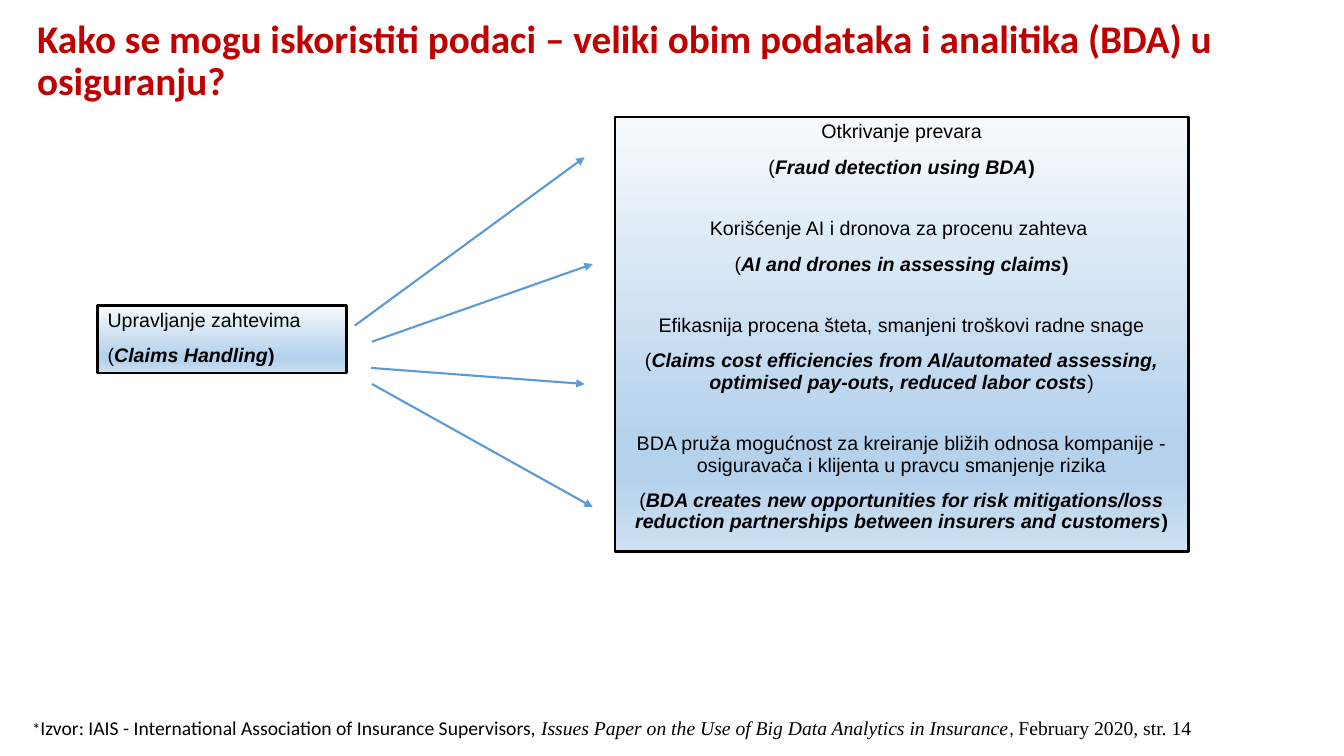
import pptx
import pptx.dml.color
import pptx.enum.dml
import pptx.enum.shapes
import pptx.enum.text
import pptx.oxml
import pptx.oxml.ns
import pptx.util
from dataclasses import dataclass

Pt = pptx.util.Pt
RGB = pptx.dml.color.RGBColor.from_string
ALIGN = pptx.enum.text.PP_ALIGN
ANCHOR = pptx.enum.text.MSO_ANCHOR


@dataclass(frozen=True)
class Theme:
    title: str = "C00000"
    text: str = "000000"
    arrow: str = "5B9BD5"
    gradient: tuple = ((0, "F7FAFD"), (74, "B5D2EC"), (83, "B5D2EC"), (100, "CEE1F2"))
    title_size: int = 28
    body_size: int = 14
    mark_size: int = 12
    heading_font: str = "Calibri"
    body_font: str = "Arial"
    source_font: str = "Times New Roman"
    box_line: float = 1.75
    arrow_line: float = 1.5


def set_all(target, values):
    for name, value in values.items():
        setattr(target, name, value)


class SlideBuilder:
    def __init__(self, slide, theme):
        self.slide = slide
        self.theme = theme

    def paragraph(self, tf, runs, color, **layout):
        """Fill the empty first paragraph or add one; runs are (text, font values)."""
        p = tf.paragraphs[0]
        if p.runs:
            p = tf.add_paragraph()
        set_all(p, layout)
        for text, values in runs:
            r = p.add_run()
            r.text = text
            set_all(r.font, values)
            r.font.color.rgb = RGB(color)

    def text(self, rect, runs, color, anchor=ANCHOR.TOP, **layout):
        sp = self.slide.shapes.add_textbox(*map(Pt, rect))
        set_all(sp.text_frame, {"word_wrap": True, "vertical_anchor": anchor})
        self.paragraph(sp.text_frame, runs, color, **layout)

    def box(self, rect, topics, alignment):
        """Gradient box of topics: (local name, English name, closing bracket is bold)."""
        t = self.theme
        sp = self.slide.shapes.add_shape(
            pptx.enum.shapes.MSO_SHAPE.RECTANGLE, *map(Pt, rect))
        sp.shadow.inherit = False
        self.gradient(sp.fill)
        sp.line.color.rgb = RGB(t.text)
        sp.line.width = Pt(t.box_line)
        tf = sp.text_frame
        set_all(tf, {"word_wrap": True, "vertical_anchor": ANCHOR.TOP})
        plain = {"name": t.body_font, "size": Pt(t.body_size), "bold": False, "italic": False}
        for i, (local, english, bold_end) in enumerate(topics):
            layout = {"alignment": alignment, "line_spacing": 0.9}
            self.paragraph(tf, [(local, plain)], t.text,
                           space_before=Pt(29 if i else 0), **layout)
            runs = [("(", plain),
                    (english, plain | {"bold": True, "italic": True}),
                    (")", plain | {"bold": bold_end})]
            self.paragraph(tf, runs, t.text, space_before=Pt(10), **layout)

    def gradient(self, fill):
        """Replace the two default stops by those of the theme, running downwards."""
        fill.gradient()
        fill.gradient_angle = 270
        stops = fill.gradient_stops._gsLst
        for gs in list(stops):
            stops.remove(gs)
        for percent, color in self.theme.gradient:
            stops.append(pptx.oxml.parse_xml(
                f'<a:gs {pptx.oxml.ns.nsdecls("a")} pos="{percent * 1000}">'
                f'<a:srgbClr val="{color}"/></a:gs>'))

    def arrow(self, start, end):
        c = self.slide.shapes.add_connector(
            pptx.enum.shapes.MSO_CONNECTOR.STRAIGHT, *map(Pt, start + end))
        c.line.color.rgb = RGB(self.theme.arrow)
        c.line.width = Pt(self.theme.arrow_line)
        ns = pptx.oxml.ns.nsdecls("a")
        c.line._get_or_add_ln().append(
            pptx.oxml.parse_xml(f'<a:tailEnd {ns} type="triangle"/>'))
        c._element.spPr.append(pptx.oxml.parse_xml(f"<a:effectLst {ns}/>"))


CLAIMS = [("Upravljanje zahtevima", "Claims Handling", True)]
USES = [
    ("Otkrivanje prevara", "Fraud detection using BDA", True),
    ("Korišćenje AI i dronova za procenu zahteva ",
     "AI and drones in assessing claims", True),
    ("Efikasnija procena šteta, smanjeni troškovi radne snage",
     "Claims cost efficiencies from AI/automated assessing, "
     "optimised pay-outs, reduced labor costs", False),
    ("BDA pruža mogućnost za kreiranje bližih odnosa kompanije - "
     "osiguravača i klijenta u pravcu smanjenje rizika",
     "BDA creates new opportunities for risk mitigations/loss reduction "
     "partnerships between insurers and customers", True),
]
ARROWS = [
    ((253.4, 232.6), (417.6, 112.3)),
    ((265.7, 244.1), (423.4, 188.6)),
    ((265, 262.8), (417.6, 274.3)),
    ((265.7, 274.3), (423.4, 362.2)),
]


def main():
    prs = pptx.Presentation()
    set_all(prs, {"slide_width": Pt(960), "slide_height": Pt(540)})
    theme = Theme()
    s = SlideBuilder(prs.slides.add_slide(prs.slide_layouts[6]), theme)

    title = {"name": theme.heading_font, "size": Pt(theme.title_size), "bold": True}
    s.text((19.4, 28.8, 932.4, 30.2),
           [("Kako se mogu iskoristiti podaci – veliki obim podataka "
             "i analitika (BDA) u osiguranju?", title)],
           theme.title, ANCHOR.MIDDLE, line_spacing=0.9)

    s.box((69.8, 218.2, 177.8, 48.2), CLAIMS, ALIGN.LEFT)
    s.box((439.2, 83.5, 409.7, 310.3), USES, ALIGN.CENTER)
    for start, end in ARROWS:
        s.arrow(start, end)

    heading = {"name": theme.heading_font, "size": Pt(theme.body_size)}
    source = heading | {"name": theme.source_font}
    s.text((15.8, 506.9, 915.1, 25.2),
           [("*", heading | {"size": Pt(theme.mark_size)}),
            ("Izvor: IAIS - International Association of Insurance Supervisors, ", heading),
            ("Issues Paper on the Use of Big Data Analytics in Insurance",
             source | {"italic": True}),
            (", ", heading),
            ("February 2020, str. 14", source)],
           theme.text, line_spacing=1.07, space_after=Pt(8))
    prs.save("out.pptx")


if __name__ == "__main__":
    main()
